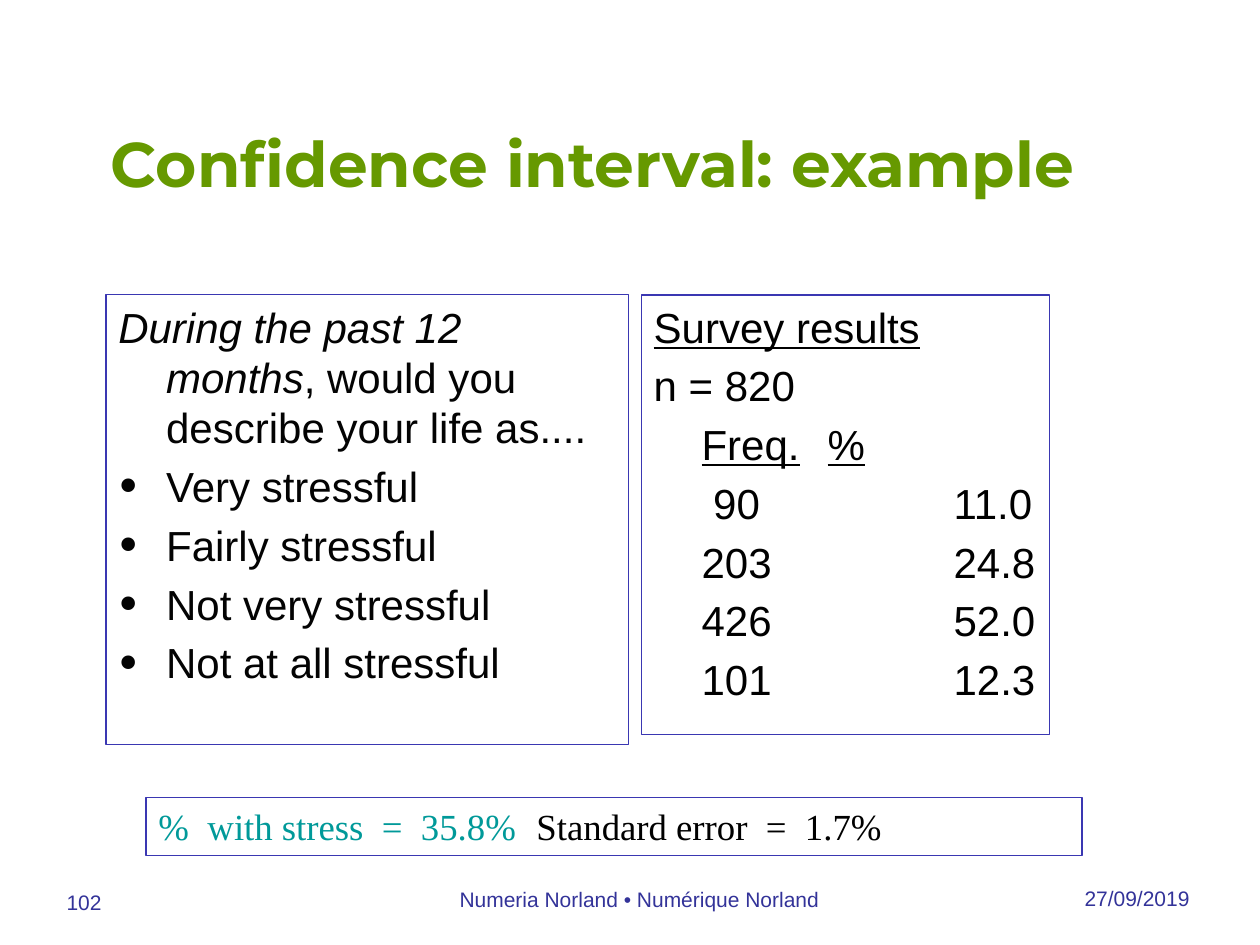
from pptx import Presentation
from pptx import util as u
from pptx.dml.color import RGBColor
from pptx.enum import shapes, text
from pptx.oxml.ns import qn
from lxml import etree

COLORS = {"title": "669900", "line": "3A37B2", "question": "030303",
          "results": "000000", "stress": "009999", "footer": "333399"}
ALIGN = text.PP_ALIGN


class Deck:
    def __init__(self, width, height):
        self.prs = Presentation()
        self.prs.slide_width = u.Inches(width)
        self.prs.slide_height = u.Inches(height)
        self.s = self.prs.slides.add_slide(self.prs.slide_layouts[5])

    def color(self, name):
        return RGBColor.from_string(COLORS[name])

    def frame(self, sp):
        tf = sp.text_frame
        tf.word_wrap = True
        tf.auto_size = text.MSO_AUTO_SIZE.NONE
        tf.vertical_anchor = text.MSO_ANCHOR.TOP
        return tf

    def run(self, p, words, size, color, font="Arial", bold=False, italic=False, underline=False):
        r = p.add_run()
        r.text = words
        f = r.font
        f.name, f.size, f.bold = font, u.Pt(size), bold
        f.italic, f.underline = italic, underline
        f.color.rgb = self.color(color)

    def title(self, words, box):
        sp = self.s.shapes.title
        sp.left, sp.top, sp.width, sp.height = map(u.Inches, box)
        p = self.frame(sp).paragraphs[0]
        p.alignment = ALIGN.LEFT
        self.run(p, words, 36, "title", "Montserrat", bold=True)

    def box(self, box, weight):
        sp = self.s.shapes.add_shape(shapes.MSO_SHAPE.RECTANGLE, *map(u.Inches, box))
        sp.shadow.inherit = False
        sp.fill.background()
        sp.line.color.rgb = self.color("line")
        sp.line.width = u.Pt(weight)
        return self.frame(sp)

    def hang(self, p, bullet, color):
        pPr = p._p.get_or_add_pPr()
        pPr.set("marL", str(u.Inches(0.38)))
        pPr.set("indent", str(-u.Inches(0.38)))
        pPr.set("defTabSz", str(u.Inches(1)))
        if bullet:
            clr = etree.SubElement(pPr, qn("a:buClr"))
            etree.SubElement(clr, qn("a:srgbClr"), val=COLORS[color])
            etree.SubElement(pPr, qn("a:buSzPct"), val="135000")
            etree.SubElement(pPr, qn("a:buFont"), typeface="Times New Roman")
            etree.SubElement(pPr, qn("a:buChar"), char="•")

    def panel(self, box, lines, color, first_bullet):
        tf = self.box(box, 0.75)
        for i, line in enumerate(lines):
            p = tf.paragraphs[0] if i == 0 else tf.add_paragraph()
            p.alignment = ALIGN.LEFT
            p.space_before = u.Pt(4.8 if i else 0)
            self.hang(p, i >= first_bullet, color)
            for words, style in line:
                self.run(p, words, 24, color, **style)

    def summary(self, box, parts):
        p = self.box(box, 1).paragraphs[0]
        p.alignment = ALIGN.LEFT
        for words, color in parts:
            self.run(p, words, 21, color, "Times New Roman")

    def footer(self, words, box, align):
        p = self.frame(self.s.shapes.add_textbox(*map(u.Inches, box))).paragraphs[0]
        p.alignment = align
        self.run(p, words, 12, "footer")


def main():
    plain, italic, under = {}, {"italic": True}, {"underline": True}
    d = Deck(10, 7.5)
    d.title("Confidence interval: example", (0.78, 0.94, 8.28, 1.09))

    answers = ["Very stressful", "Fairly stressful", "Not very stressful", "Not at all stressful"]
    question = [("During the past 12 months", italic),
                (", would you describe your life as....", plain)]
    d.panel((0.84, 2.34, 4.15, 3.57), [question] + [[(a, plain)] for a in answers], "question", 1)

    rows = [(" 90", "11.0"), ("203", "24.8"), ("426", "52.0"), ("101", "12.3")]
    results = [[("Survey results", under)], [("n = 820", plain)],
               [("\t", plain), ("Freq.", under), ("\t", plain), ("%", under)]]
    results += [[(f"\t{freq}\t\t{pct}", plain)] for freq, pct in rows]
    d.panel((5.09, 2.34, 3.24, 3.49), results, "results", len(results))

    d.summary((1.16, 6.33, 7.43, 0.46), [("%  with stress  =  35.8%", "stress"),
                                         ("\tStandard error  =  1.7%", "results")])

    d.footer("27/09/2019", (8.15, 6.98, 1.39, 0.52), ALIGN.RIGHT)
    d.footer("102", (0.43, 7.01, 1.66, 0.52), ALIGN.LEFT)
    d.footer("Numeria Norland • Numérique Norland", (2.95, 6.99, 4.25, 0.52), ALIGN.CENTER)
    d.prs.save("out.pptx")


if __name__ == "__main__":
    main()
